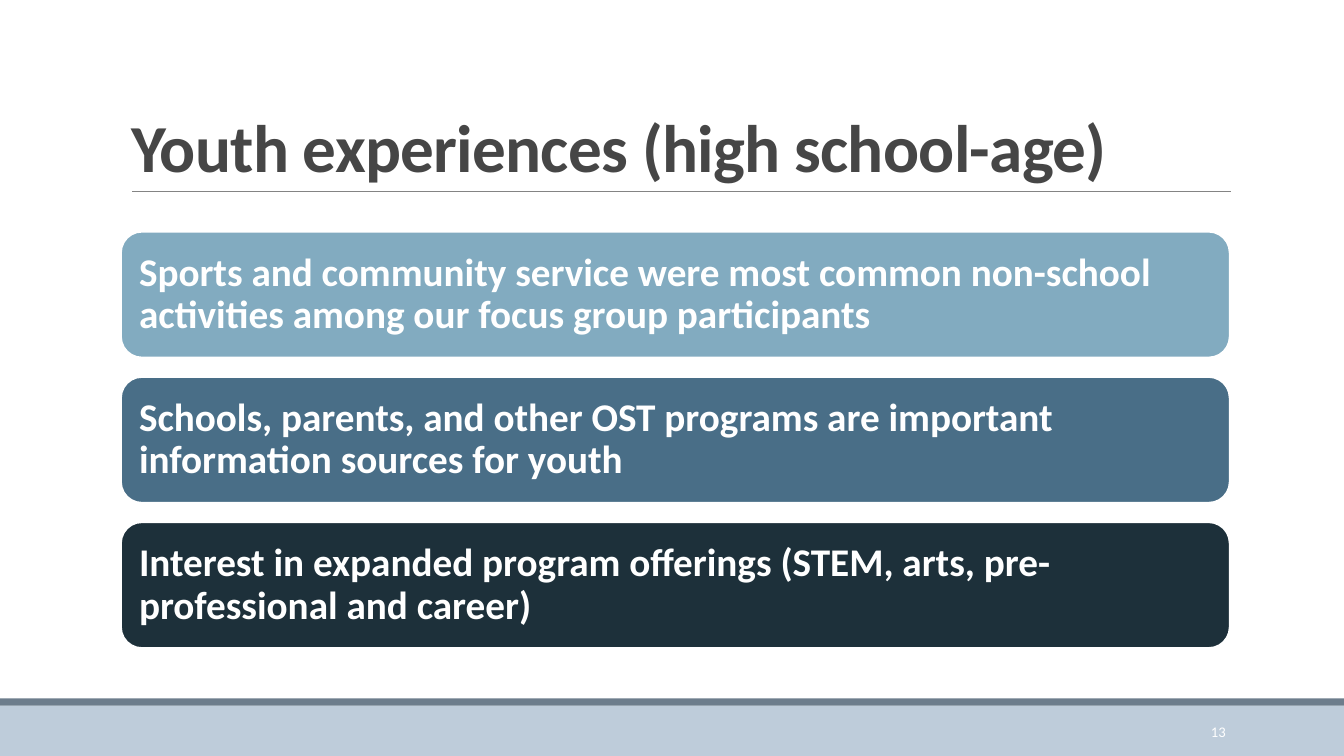
from lxml.etree import SubElement
from pptx import Presentation
from pptx.dml.color import RGBColor
from pptx.enum.shapes import MSO_CONNECTOR as Link, MSO_SHAPE as Form
from pptx.enum.text import MSO_ANCHOR as Anchor, MSO_AUTO_SIZE as Fit, PP_ALIGN as Align
from pptx.oxml.ns import qn
from pptx.util import Cm, Pt

WHITE = RGBColor(0xFF, 0xFF, 0xFF)
INK = RGBColor(0x46, 0x46, 0x46)
GREY = RGBColor(0x84, 0x84, 0x84)
PALE = RGBColor(0xBE, 0xCC, 0xDA)
SLATE = RGBColor(0x6D, 0x7D, 0x8C)
SKY = RGBColor(0x82, 0xAB, 0xC0)
BLUE = RGBColor(0x49, 0x6E, 0x87)
NAVY = RGBColor(0x1D, 0x30, 0x3A)

WIDTH, HEIGHT = 33.87, 19.05
LEFT, SPAN = 3.05, 27.94
CARD_TOP, CARD_HIGH, CARD_STEP = 5.84, 3.17, 3.66

CARDS = [
    (SKY, "Sports and community service were most common non-school "
          "activities among our focus group participants"),
    (BLUE, "Schools, parents, and other OST programs are important "
           "information sources for youth"),
    (NAVY, "Interest in expanded program offerings (STEM, arts, "
           "pre-professional and career)"),
]


class Page:
    font = "Calibri"

    def __init__(self, deck):
        self.slide = deck.slides.add_slide(deck.slide_layouts[5])
        self.shapes = self.slide.shapes

    def label(self, shape, text, size, color, bold=False, align=Align.LEFT,
              lines=1.0, anchor=Anchor.MIDDLE):
        frame = shape.text_frame
        frame.word_wrap = True
        frame.auto_size = Fit.NONE
        frame.vertical_anchor = anchor
        para = frame.paragraphs[0]
        para.alignment = align
        para.line_spacing = lines
        run = para.add_run()
        run.text = text
        run.font.name = self.font
        run.font.size = Pt(size)
        run.font.bold = bold
        run.font.color.rgb = color
        return run

    def title(self, text, left, top, width, height):
        box = self.shapes.title
        box.left, box.top = Cm(left), Cm(top)
        box.width, box.height = Cm(width), Cm(height)
        run = self.label(box, text, 48, INK, True, lines=0.85, anchor=Anchor.BOTTOM)
        run.font._element.set("spc", "-50")

    def block(self, form, fill, left, top, width, height):
        shape = self.shapes.add_shape(form, Cm(left), Cm(top), Cm(width), Cm(height))
        shape.shadow.inherit = False
        shape.fill.solid()
        shape.fill.fore_color.rgb = fill
        shape.line.fill.background()
        return shape

    def card(self, text, fill, top):
        shape = self.block(Form.ROUNDED_RECTANGLE, fill, LEFT, top, SPAN, CARD_HIGH)
        shape.line.color.rgb = WHITE
        shape.line.width = Pt(1.25)
        frame = shape.text_frame
        frame.margin_left = frame.margin_right = Cm(0.3)
        frame.margin_top = frame.margin_bottom = Cm(0.3)
        self.label(shape, text, 28, WHITE, True, lines=0.9)

    def rule(self, left, right, top):
        line = self.shapes.add_connector(
            Link.STRAIGHT, Cm(left), Cm(top), Cm(right), Cm(top))
        line.line.color.rgb = GREY
        line.line.width = Pt(0.5)
        SubElement(line._element.spPr, qn("a:effectLst"))

    def number(self, text, left, top, width, height):
        box = self.shapes.add_textbox(Cm(left), Cm(top), Cm(width), Cm(height))
        self.label(box, text, 10.5, WHITE, align=Align.RIGHT)


def main():
    deck = Presentation()
    deck.slide_width, deck.slide_height = Cm(WIDTH), Cm(HEIGHT)
    page = Page(deck)
    page.block(Form.RECTANGLE, PALE, 0, 17.78, WIDTH, 1.27)
    page.block(Form.RECTANGLE, SLATE, 0, 17.6, WIDTH, 0.18)
    page.rule(3.33, 31.01, 4.83)
    page.title("Youth experiences (high school-age)", LEFT, 0.79, SPAN, 4.04)
    for row, (fill, text) in enumerate(CARDS):
        page.card(text, fill, CARD_TOP + row * CARD_STEP)
    page.number("13", 27.51, 17.93, 3.63, 1.02)
    deck.save("out.pptx")


if __name__ == "__main__":
    main()
